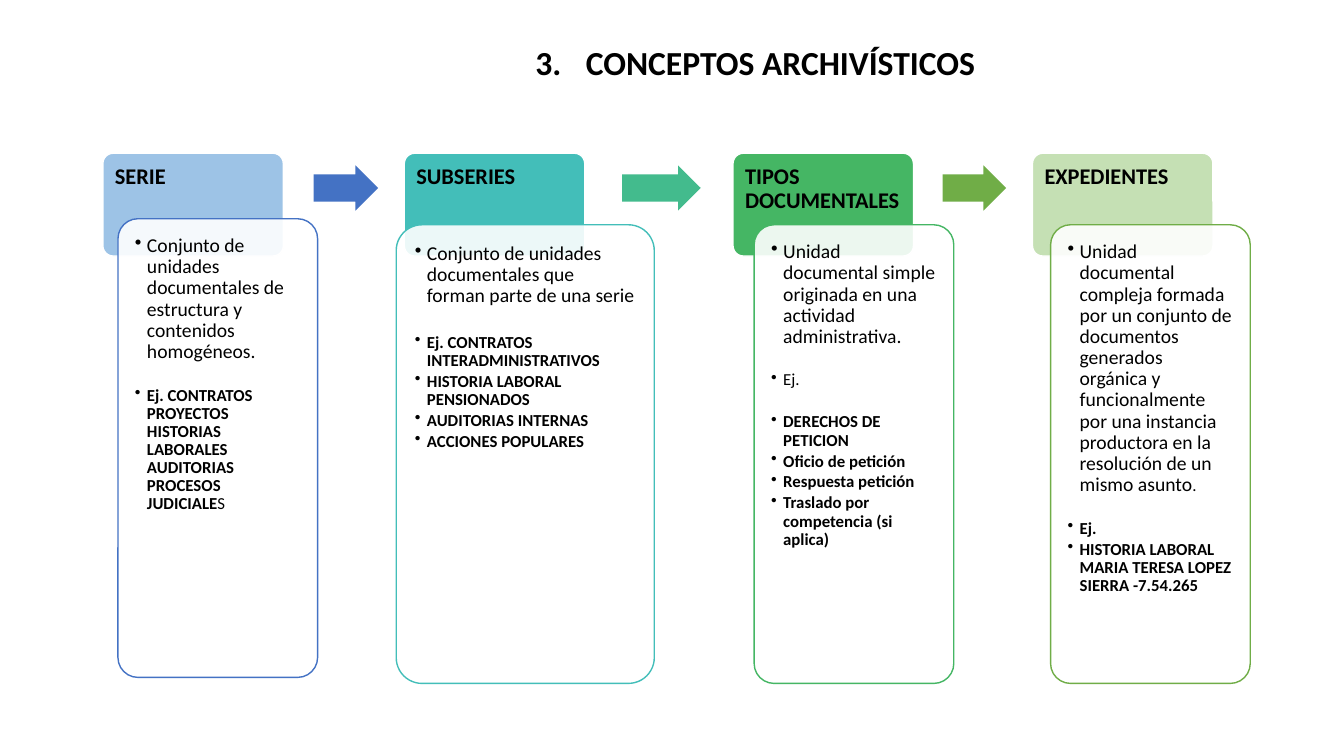
from dataclasses import dataclass

from lxml import etree
from pptx import Presentation
from pptx.dml.color import RGBColor
from pptx.enum.shapes import MSO_SHAPE
from pptx.enum.text import MSO_ANCHOR, PP_ALIGN
from pptx.oxml.ns import qn
from pptx.util import Pt

EMU_PER_PX = 9144
FONT = "Calibri"
BLACK = RGBColor(0x00, 0x00, 0x00)
WHITE = RGBColor(0xFF, 0xFF, 0xFF)
LIGHT_BLUE = RGBColor(0x9D, 0xC3, 0xE6)
BLUE = RGBColor(0x44, 0x72, 0xC4)
TEAL = RGBColor(0x43, 0xBE, 0xB9)
SEA_GREEN = RGBColor(0x43, 0xBB, 0x8D)
GREEN = RGBColor(0x45, 0xB6, 0x64)
OLIVE = RGBColor(0x70, 0xAD, 0x47)
LIGHT_GREEN = RGBColor(0xC5, 0xE0, 0xB4)

HEAD_TOP, HEAD_W, HEAD_H = 152, 179, 102
BODY_H = 455
ARROW_TOP, ARROW_H = 164, 45
HEAD_INSET, BODY_INSET, HANGING = 9, 11, 12


@dataclass
class Run:
    text: str
    size: int = 12
    bold: bool = True


@dataclass
class Item:
    runs: list[Run]
    gap: int = 0


@dataclass
class Concept:
    name: str
    head_x: int
    head_color: RGBColor
    body_x: int
    body_y: int
    body_w: int
    body_color: RGBColor
    items: list[Item]


@dataclass
class Arrow:
    x: int
    w: int
    color: RGBColor


def definition(text: str) -> Item:
    return Item([Run(text, 14, False)])


def example(text: str, gap: int = 0) -> Item:
    return Item([Run(text)], gap)


CONCEPTS = [
    Concept("SERIE", 102, LIGHT_BLUE, 117, 217, 198, BLUE, [
        definition("Conjunto de unidades documentales de estructura y contenidos homogéneos."),
        Item([Run("Ej. CONTRATOS PROYECTOS HISTORIAS LABORALES AUDITORIAS PROCESOS JUDICIALE"),
              Run("S", bold=False)], 15),
    ]),
    Concept("SUBSERIES", 401, TEAL, 393, 223, 256, TEAL, [
        definition("Conjunto de unidades documentales que forman parte de una serie"),
        example("Ej. CONTRATOS INTERADMINISTRATIVOS", 17),
        example("HISTORIA LABORAL PENSIONADOS"),
        example("AUDITORIAS INTERNAS"),
        example("ACCIONES POPULARES"),
    ]),
    Concept("TIPOS DOCUMENTALES", 727, GREEN, 748, 223, 198, GREEN, [
        definition("Unidad documental simple originada en una actividad administrativa."),
        Item([Run("Ej.", bold=False)], 15),
        example("DERECHOS DE PETICION", 15),
        example("Oficio de petición"),
        example("Respuesta petición"),
        example("Traslado por competencia (si aplica)"),
    ]),
    Concept("EXPEDIENTES", 1024, LIGHT_GREEN, 1042, 223, 198, OLIVE, [
        Item([Run("Unidad documental compleja formada por un conjunto de documentos generados "
                  "orgánica y funcionalmente por una instancia productora en la resolución "
                  "de un mismo asunto", 14, False), Run(".", bold=False)]),
        example("Ej.", 15),
        example("HISTORIA LABORAL MARIA TERESA LOPEZ SIERRA -7.54.265"),
    ]),
]
ARROWS = [Arrow(311, 64, BLUE), Arrow(617, 78, SEA_GREEN), Arrow(935, 63, OLIVE)]


def px(n: int) -> int:
    return n * EMU_PER_PX


def format_run(r, size: int, bold: bool) -> None:
    r.font.name = FONT
    r.font.size = Pt(size)
    r.font.bold = bold
    r.font.color.rgb = BLACK


def add_block(slide, kind, x: int, y: int, w: int, h: int, fill: RGBColor):
    sp = slide.shapes.add_shape(kind, px(x), px(y), px(w), px(h))
    sp.shadow.inherit = False
    sp.fill.solid()
    sp.fill.fore_color.rgb = fill
    return sp


def add_rounded(slide, x: int, y: int, w: int, h: int,
                fill: RGBColor, line: RGBColor, inset: int):
    sp = add_block(slide, MSO_SHAPE.ROUNDED_RECTANGLE, x, y, w, h, fill)
    sp.adjustments[0] = 0.1
    sp.line.color.rgb = line
    sp.line.width = Pt(1)
    tf = sp.text_frame
    tf.word_wrap = True
    tf.vertical_anchor = MSO_ANCHOR.TOP
    tf.margin_left = tf.margin_right = tf.margin_top = tf.margin_bottom = px(inset)
    return sp


def add_bullet(p) -> None:
    pPr = p._p.get_or_add_pPr()
    pPr.set("marL", str(px(HANGING)))
    pPr.set("indent", str(-px(HANGING)))
    etree.SubElement(pPr, qn("a:buChar")).set("char", "•")


def add_concept(slide, concept: Concept) -> None:
    head = add_rounded(slide, concept.head_x, HEAD_TOP, HEAD_W, HEAD_H,
                       concept.head_color, WHITE, HEAD_INSET)
    p = head.text_frame.paragraphs[0]
    p.text = concept.name
    p.alignment = PP_ALIGN.LEFT
    p.line_spacing = 0.9
    format_run(p.runs[0], 16, True)

    body = add_rounded(slide, concept.body_x, concept.body_y, concept.body_w, BODY_H,
                       WHITE, concept.body_color, BODY_INSET)
    color = body.fill._xPr.find(qn("a:solidFill"))[0]
    etree.SubElement(color, qn("a:alpha")).set("val", "90000")
    tf = body.text_frame
    for i, item in enumerate(concept.items):
        p = tf.add_paragraph() if i else tf.paragraphs[0]
        add_bullet(p)
        p.alignment = PP_ALIGN.LEFT
        p.line_spacing = 0.9
        p.space_after = Pt(2)
        if item.gap:
            p.space_before = Pt(item.gap)
        for run in item.runs:
            r = p.add_run()
            r.text = run.text
            format_run(r, run.size, run.bold)


def add_arrow(slide, arrow: Arrow) -> None:
    sp = add_block(slide, MSO_SHAPE.RIGHT_ARROW, arrow.x, ARROW_TOP,
                   arrow.w, ARROW_H, arrow.color)
    sp.adjustments[0] = 0.6
    sp.adjustments[1] = 0.5
    sp.line.fill.background()


def add_title(slide) -> None:
    title = slide.shapes.title
    title.left, title.top, title.width, title.height = px(521), px(14), px(618), px(100)
    tf = title.text_frame
    tf.text = "3.\tCONCEPTOS ARCHIVÍSTICOS"
    tf.vertical_anchor = MSO_ANCHOR.MIDDLE
    p = tf.paragraphs[0]
    p.alignment = PP_ALIGN.LEFT
    p.line_spacing = 0.9
    format_run(p.runs[0], 24, True)


def main() -> None:
    prs = Presentation()
    prs.slide_width, prs.slide_height = px(1333), px(750)
    slide = prs.slides.add_slide(prs.slide_layouts[5])
    add_title(slide)
    for concept in CONCEPTS:
        add_concept(slide, concept)
    for arrow in ARROWS:
        add_arrow(slide, arrow)
    prs.save("out.pptx")


if __name__ == "__main__":
    main()
